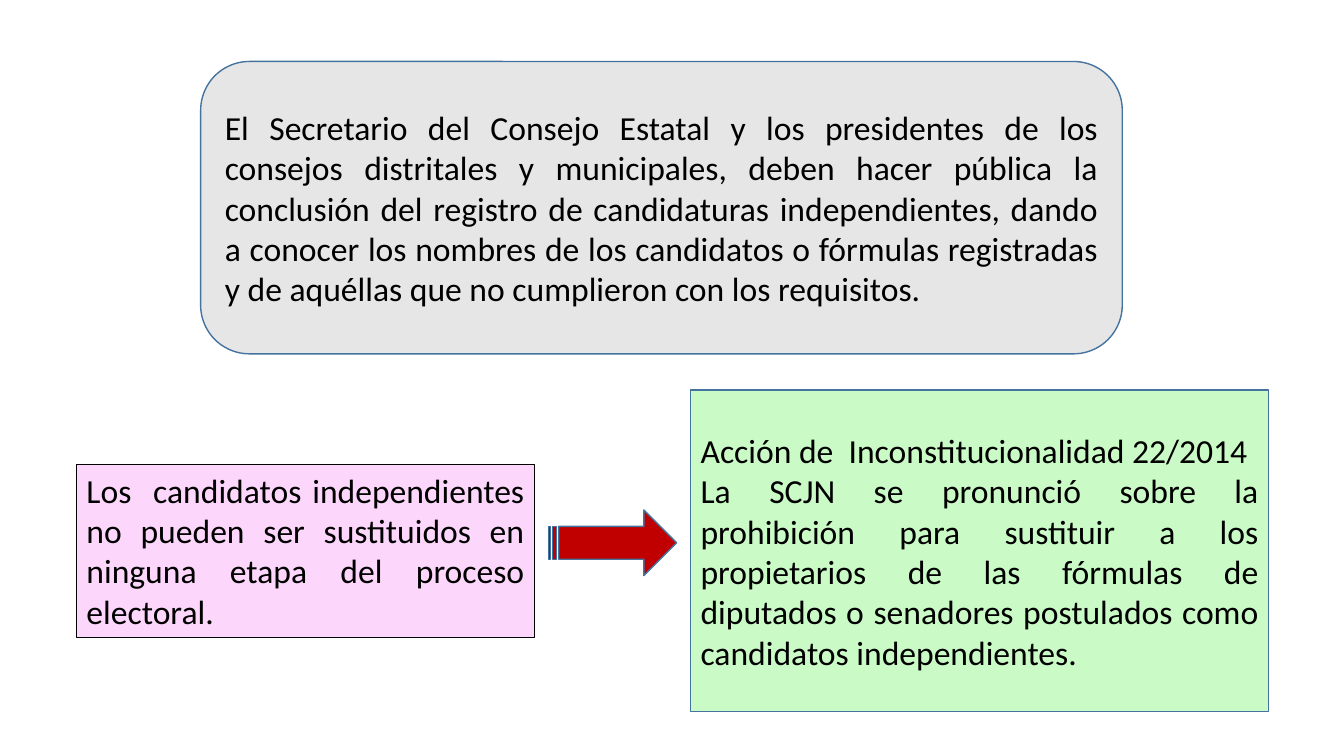
from pptx import Presentation
from pptx.dml.color import RGBColor
from pptx.enum.shapes import MSO_SHAPE as Preset
from pptx.enum.text import MSO_ANCHOR as Anchor, MSO_AUTO_SIZE as AutoSize, PP_ALIGN as Align
from pptx.util import Inches, Pt

BLUE, BLACK = "43739E", "000000"


def color(hex_code):
    return RGBColor.from_string(hex_code)


class RulesSlide:
    """Holds the text style and the slide; places are percentages of its size."""

    font_format = {"name": "Calibri", "size": Pt(24)}

    def __init__(self, deck):
        self.width, self.height = deck.slide_width, deck.slide_height
        self.slide = deck.slides.add_slide(deck.slide_layouts[6])

    def figure(self, preset, place, fill, line=BLUE, weight=1):
        left, top, width, height = place
        shape = self.slide.shapes.add_shape(
            preset,
            round(self.width * left / 100), round(self.height * top / 100),
            round(self.width * width / 100), round(self.height * height / 100))
        shape.shadow.inherit = False
        shape.fill.solid()
        shape.fill.fore_color.rgb = color(fill)
        shape.line.color.rgb = color(line)
        shape.line.width = Pt(weight)
        return shape

    def statement(self, preset, place, fill, paragraphs, frame_format=None, **outline):
        frame = self.figure(preset, place, fill, **outline).text_frame
        settings = {"word_wrap": True, "vertical_anchor": Anchor.MIDDLE}
        for name, value in {**settings, **(frame_format or {})}.items():
            setattr(frame, name, value)
        frame.text = "\n".join(paragraphs)
        for paragraph in frame.paragraphs:
            paragraph.alignment = Align.JUSTIFY
            for run in paragraph.runs:
                for name, value in self.font_format.items():
                    setattr(run.font, name, value)
                run.font.color.rgb = color(BLACK)


def main():
    deck = Presentation()
    deck.slide_width, deck.slide_height = Inches(13.33), Inches(7.5)
    rules = RulesSlide(deck)

    # Publication of the registry
    rules.statement(Preset.ROUNDED_RECTANGLE, (14.93, 8.13, 68.57, 38.67), "E7E6E6", [
        "El Secretario del Consejo Estatal y los presidentes de los consejos "
        "distritales y municipales, deben hacer pública la conclusión del registro "
        "de candidaturas independientes, dando a conocer los nombres de los "
        "candidatos o fórmulas registradas y de aquéllas que no cumplieron con los "
        "requisitos."])

    # Ban on substitution
    rules.statement(Preset.RECTANGLE, (5.7, 61.47, 34.06, 22.93), "FDD7FB", [
        "Los  candidatos independientes no pueden ser sustituidos en ninguna etapa "
        "del proceso electoral."],
        {"vertical_anchor": Anchor.TOP, "auto_size": AutoSize.SHAPE_TO_FIT_TEXT},
        line=BLACK, weight=0.75)

    # From the ban to the court ruling
    rules.figure(Preset.STRIPED_RIGHT_ARROW, (40.81, 67.47, 9.53, 8.67), "C00000")

    # Court ruling
    rules.statement(Preset.RECTANGLE, (51.39, 51.6, 42.99, 42.53), "CAFAC6", [
        "Acción de  Inconstitucionalidad 22/2014",
        "La SCJN se pronunció sobre la prohibición para sustituir a los propietarios "
        "de las fórmulas de diputados o senadores postulados como candidatos "
        "independientes."])

    deck.save("out.pptx")


if __name__ == "__main__":
    main()
